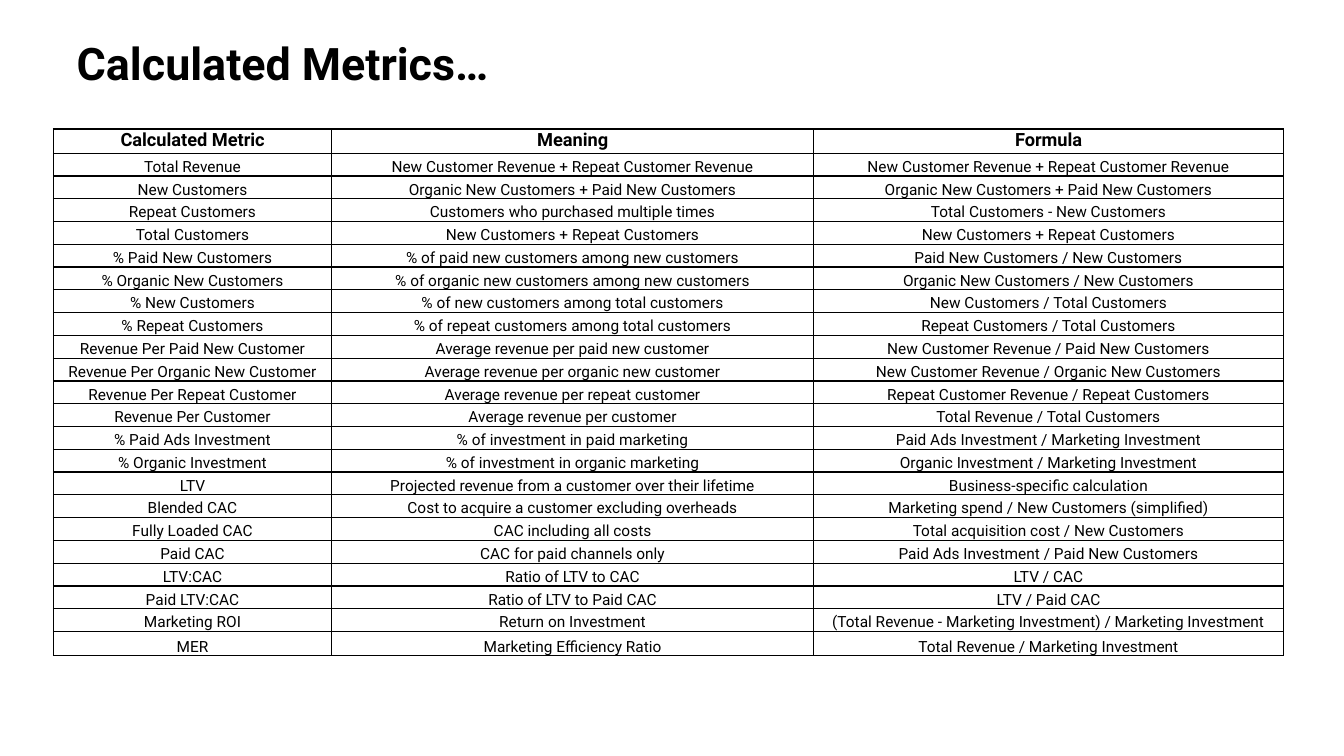
from lxml.etree import SubElement
from pptx import Presentation
from pptx.dml.color import RGBColor
from pptx.enum.text import MSO_ANCHOR, PP_ALIGN
from pptx.oxml.ns import qn
from pptx.util import Inches, Pt

COLORS = {"ink": "000000", "paper": "FFFFFF"}
FONT = "Roboto"

HEADER = ("Calculated Metric", "Meaning", "Formula")
METRICS = [
    ("Total Revenue", "New Customer Revenue + Repeat Customer Revenue",
     "New Customer Revenue + Repeat Customer Revenue"),
    ("New Customers", "Organic New Customers + Paid New Customers",
     "Organic New Customers + Paid New Customers"),
    ("Repeat Customers", "Customers who purchased multiple times",
     "Total Customers - New Customers"),
    ("Total Customers", "New Customers + Repeat Customers",
     "New Customers + Repeat Customers"),
    ("% Paid New Customers", "% of paid new customers among new customers",
     "Paid New Customers / New Customers"),
    ("% Organic New Customers", "% of organic new customers among new customers",
     "Organic New Customers / New Customers"),
    ("% New Customers", "% of new customers among total customers",
     "New Customers / Total Customers"),
    ("% Repeat Customers", "% of repeat customers among total customers",
     "Repeat Customers / Total Customers"),
    ("Revenue Per Paid New Customer", "Average revenue per paid new customer",
     "New Customer Revenue / Paid New Customers"),
    ("Revenue Per Organic New Customer", "Average revenue per organic new customer",
     "New Customer Revenue / Organic New Customers"),
    ("Revenue Per Repeat Customer", "Average revenue per repeat customer",
     "Repeat Customer Revenue / Repeat Customers"),
    ("Revenue Per Customer", "Average revenue per customer",
     "Total Revenue / Total Customers"),
    ("% Paid Ads Investment", "% of investment in paid marketing",
     "Paid Ads Investment / Marketing Investment"),
    ("% Organic Investment", "% of investment in organic marketing",
     "Organic Investment / Marketing Investment"),
    ("LTV", "Projected revenue from a customer over their lifetime",
     "Business-specific calculation"),
    ("Blended CAC", "Cost to acquire a customer excluding overheads",
     "Marketing spend / New Customers (simplified)"),
    ("Fully Loaded CAC", "CAC including all costs",
     "Total acquisition cost / New Customers"),
    ("Paid CAC", "CAC for paid channels only",
     "Paid Ads Investment / Paid New Customers"),
    ("LTV:CAC", "Ratio of LTV to CAC", "LTV / CAC"),
    ("Paid LTV:CAC", "Ratio of LTV to Paid CAC", "LTV / Paid CAC"),
    ("Marketing ROI", "Return on Investment",
     "(Total Revenue - Marketing Investment) / Marketing Investment"),
    ("MER", "Marketing Efficiency Ratio", "Total Revenue / Marketing Investment"),
]

# Table geometry in inches
TABLE_LEFT, TABLE_TOP, TABLE_HEIGHT = 0.53, 1.28, 5.23
COLUMN_WIDTHS = (2.76, 4.78, 4.66)
EDGE_ROW_HEIGHT = 0.24


def write_text(frame, text, size, bold=False, align=PP_ALIGN.LEFT, spacing=1.0):
    para = frame.paragraphs[0]
    para.alignment = align
    para.line_spacing = spacing
    span = para.add_run()
    span.text = text
    span.font.name = FONT
    span.font.size = Pt(size)
    span.font.bold = bold
    span.font.color.rgb = RGBColor.from_string(COLORS["ink"])


def add_title(page, text):
    box = page.shapes.add_textbox(Inches(0.76), Inches(0.41), Inches(11.81), Inches(0.67))
    frame = box.text_frame
    frame.word_wrap = True
    frame.margin_left = frame.margin_right = frame.margin_top = frame.margin_bottom = 0
    write_text(frame, text, size=32, bold=True, spacing=0.9)


def add_borders(cell, color, width):
    # Border lines must precede the fill in the cell properties
    properties = cell._tc.get_or_add_tcPr()
    for position, side in enumerate(("a:lnL", "a:lnR", "a:lnT", "a:lnB")):
        line = SubElement(properties, qn(side), w=str(Pt(width)))
        fill = SubElement(line, qn("a:solidFill"))
        SubElement(fill, qn("a:srgbClr"), val=color)
        properties.insert(position, line)


def format_cell(cell, text, header):
    cell.fill.background()
    cell.margin_left = cell.margin_right = cell.margin_top = Inches(0.01)
    cell.margin_bottom = 0
    cell.vertical_anchor = MSO_ANCHOR.TOP if header else MSO_ANCHOR.BOTTOM
    write_text(cell.text_frame, text, size=13 if header else 11, bold=header,
               align=PP_ALIGN.CENTER)
    add_borders(cell, COLORS["ink"], width=1)


def add_metrics_table(page, rows):
    frame = page.shapes.add_table(
        len(rows), len(COLUMN_WIDTHS), Inches(TABLE_LEFT), Inches(TABLE_TOP),
        Inches(sum(COLUMN_WIDTHS)), Inches(TABLE_HEIGHT))
    table = frame.table
    table.first_row = table.horz_banding = False
    for column, width in zip(table.columns, COLUMN_WIDTHS):
        column.width = Inches(width)

    # First and last rows are slightly taller; the others share the rest
    last = len(rows) - 1
    inner_height = (TABLE_HEIGHT - 2 * EDGE_ROW_HEIGHT) / (len(rows) - 2)
    for index, texts in enumerate(rows):
        height = EDGE_ROW_HEIGHT if index in (0, last) else inner_height
        table.rows[index].height = Inches(height)
        for cell, text in zip(table.rows[index].cells, texts):
            format_cell(cell, text, header=index == 0)


def main():
    deck = Presentation()
    deck.slide_width, deck.slide_height = Inches(13.33), Inches(7.5)
    page = deck.slides.add_slide(deck.slide_layouts[6])
    page.background.fill.solid()
    page.background.fill.fore_color.rgb = RGBColor.from_string(COLORS["paper"])
    add_title(page, "Calculated Metrics…")
    add_metrics_table(page, [HEADER, *METRICS])
    deck.save("out.pptx")


if __name__ == "__main__":
    main()
